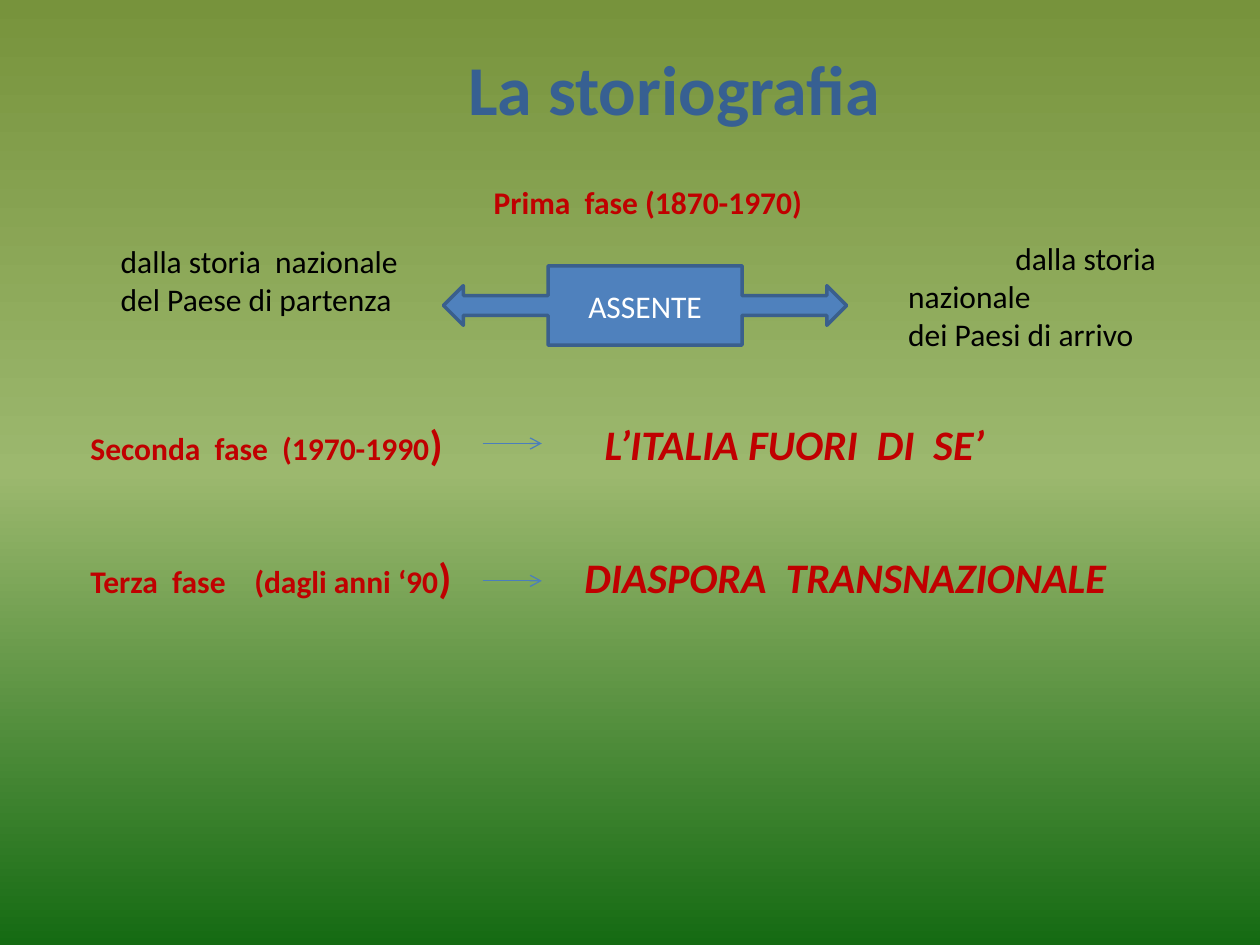
"""Build a slide on the three phases of the historiography of Italian emigration."""
from copy import deepcopy

from lxml.etree import SubElement
from pptx import Presentation
from pptx.dml.color import RGBColor
from pptx.enum.shapes import MSO_CONNECTOR as Connector, MSO_SHAPE as Shape
from pptx.enum.text import MSO_ANCHOR as Anchor, PP_ALIGN as Align
from pptx.oxml.ns import qn
from pptx.util import Inches, Pt

COLORS = {
    "title": "376092", "phase": "C00000", "body": "000000", "white": "FFFFFF",
    "box": "4F81BD", "box_line": "3A5F8C", "arrow": "4B7EBC",
}
BACKGROUND = [(0, "77933C"), (0.5, "9CB86E"), (1, "156B13")]
FONT = "Calibri"

TITLE = "La storiografia"
FIRST_PHASE = "Prima  fase (1870-1970)"
CENTER = "ASSENTE"
ORIGIN = ["dalla storia  nazionale", "del Paese di partenza"]
ARRIVAL = ["dalla storia  nazionale", "dei Paesi di arrivo"]
SMALL, ITALIC = {"size": 18}, {"italic": True}
LATER_PHASES = [
    {"top": 3.27, "arrow_y": 3.52, "parts": [
        (0.62, 0, 3.1, [("Seconda  fase  (1970-1990", SMALL), (")", {})]),
        (4.7, 0, 5.3, [("L’ITALIA FUORI  DI  SE’", ITALIC)])]},
    {"top": 4.33, "arrow_y": 4.61, "parts": [
        (0.62, 0.08, 1.3, [("Terza  fase", SMALL)]),
        (1.92, 0, 1.85, [("(dagli anni ‘90", SMALL), (")", {})]),
        (4.54, 0, 4.75, [("DIASPORA  TRANSNAZIONALE", ITALIC)])]},
]
ARROW_X = (3.83, 4.3)


def rgb(name):
    return RGBColor.from_string(COLORS[name])


def add_run(paragraph, text, size=18, color="body", bold=False, italic=False):
    run = paragraph.add_run()
    run.text = text
    font = run.font
    font.name, font.size, font.bold, font.italic = FONT, Pt(size), bold, italic
    font.color.rgb = rgb(color)


def add_text(slide, lines, box, align=Align.LEFT, first_indent=0, **style):
    """Add a text box; each line is a string or a list of (text, style) runs."""
    frame = slide.shapes.add_textbox(*map(Inches, box)).text_frame
    frame.word_wrap = True
    for index, line in enumerate(lines):
        paragraph = frame.add_paragraph() if index else frame.paragraphs[0]
        paragraph.alignment = align
        if first_indent and index == 0:
            paragraph._p.get_or_add_pPr().set("indent", str(Inches(first_indent)))
        runs = [(line, {})] if isinstance(line, str) else line
        for text, extra in runs:
            add_run(paragraph, text, **{**style, **extra})


def add_arrow(slide, y):
    start, end = map(Inches, ARROW_X)
    arrow = slide.shapes.add_connector(Connector.STRAIGHT, start, Inches(y), end, Inches(y))
    arrow.line.color.rgb = rgb("arrow")
    arrow.line.width = Pt(0.75)
    SubElement(arrow.line._get_or_add_ln(), qn("a:tailEnd"), type="arrow")
    SubElement(arrow._element.spPr, qn("a:effectLst"))


def add_callout(slide, text, box):
    callout = slide.shapes.add_shape(Shape.LEFT_RIGHT_ARROW_CALLOUT, *map(Inches, box))
    callout.shadow.inherit = False
    callout.fill.solid()
    callout.fill.fore_color.rgb = rgb("box")
    callout.line.color.rgb = rgb("box_line")
    callout.line.width = Pt(2)
    callout.text_frame.vertical_anchor = Anchor.MIDDLE
    paragraph = callout.text_frame.paragraphs[0]
    paragraph.alignment = Align.CENTER
    add_run(paragraph, text, color="white")


def set_background(slide):
    fill = slide.background.fill
    fill.gradient()
    fill.gradient_angle = 270
    stop_list = fill._fill._gradFill.gsLst
    stop_list.append(deepcopy(stop_list[-1]))
    for stop, (position, color) in zip(fill.gradient_stops, BACKGROUND):
        stop.position = position
        stop.color.rgb = RGBColor.from_string(color)


def main():
    presentation = Presentation()
    presentation.slide_width, presentation.slide_height = Inches(10), Inches(7.5)
    slide = presentation.slides.add_slide(presentation.slide_layouts[6])
    set_background(slide)
    add_text(slide, [TITLE], (3.28, 0.31, 4.14, 0.77), align=Align.CENTER,
             size=40, color="title", bold=True)
    for phase in LATER_PHASES:
        for left, drop, width, runs in phase["parts"]:
            add_text(slide, [runs], (left, phase["top"] + drop, width, 0.5),
                     size=24, color="phase", bold=True)
        add_arrow(slide, phase["arrow_y"])
    add_text(slide, ARRIVAL, (7.11, 1.85, 2.58, 1.01), first_indent=0.85)
    add_callout(slide, CENTER, (3.52, 2.11, 3.2, 0.63))
    add_text(slide, ORIGIN, (0.86, 1.87, 2.5, 0.71))
    add_text(slide, [FIRST_PHASE], (3.82, 1.4, 3.44, 0.4), color="phase", bold=True)
    presentation.save("out.pptx")


if __name__ == "__main__":
    main()
